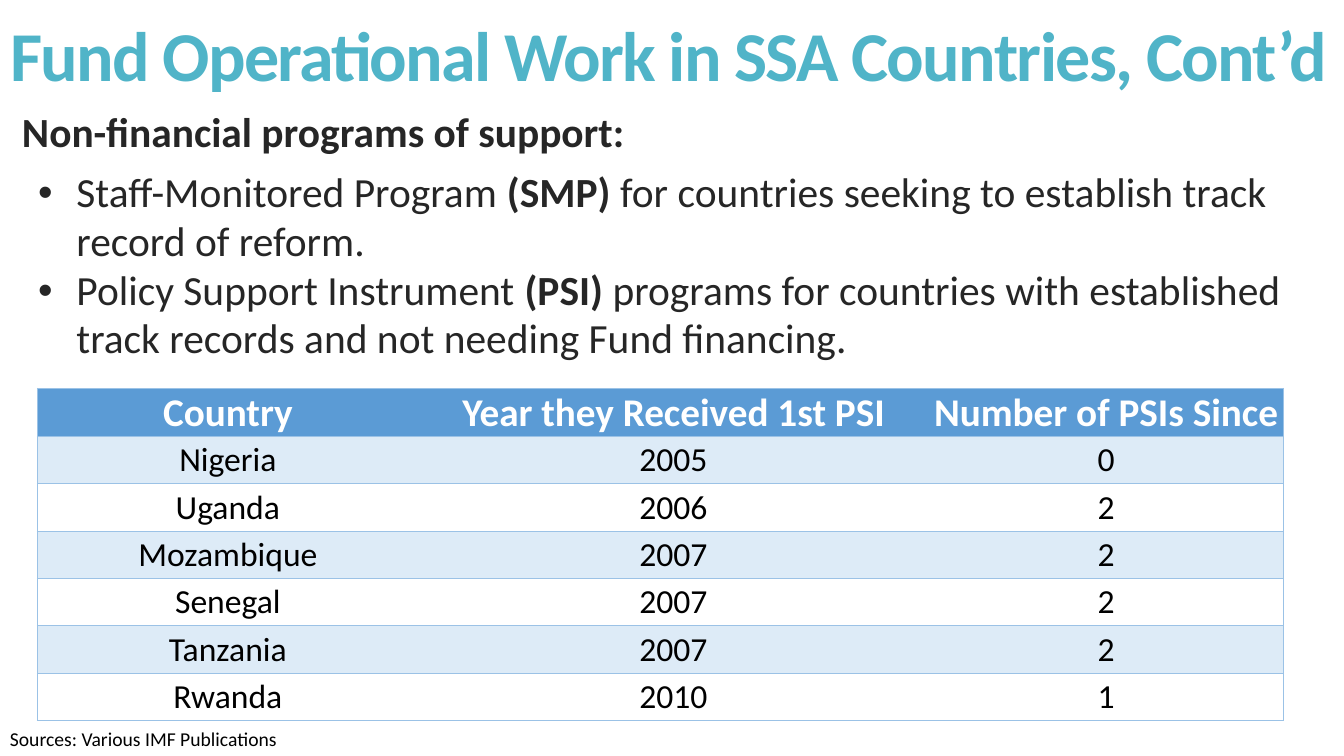
from lxml import etree
from pptx import Presentation
from pptx.dml.color import RGBColor
from pptx.enum.text import MSO_ANCHOR, MSO_AUTO_SIZE, PP_ALIGN
from pptx.oxml.ns import qn
from pptx.util import Inches, Pt

TEAL = RGBColor(0x50, 0xB4, 0xC8)
DARK = RGBColor(0x26, 0x26, 0x26)
BLACK = RGBColor(0, 0, 0)
WHITE = RGBColor(0xFF, 0xFF, 0xFF)
HEADER_BLUE = RGBColor(0x5B, 0x9B, 0xD5)
BAND_BLUE = RGBColor(0xDD, 0xEB, 0xF7)
BORDER_BLUE = RGBColor(0x9B, 0xC2, 0xE6)
LEFT, CENTER = PP_ALIGN.LEFT, PP_ALIGN.CENTER
MIDDLE, TOP = MSO_ANCHOR.MIDDLE, MSO_ANCHOR.TOP
NO_AUTOFIT = MSO_AUTO_SIZE.NONE


def format_run(run, size, color, bold=False):
    run.font.name = "Calibri"
    run.font.size = Pt(size)
    run.font.bold = bold
    run.font.color.rgb = color


def add_border(cell, side, visible):
    line = etree.SubElement(cell._tc.get_or_add_tcPr(), qn(f"a:ln{side}"), w=str(Pt(0.5)))
    if visible:
        fill = etree.SubElement(line, qn("a:solidFill"))
        etree.SubElement(fill, qn("a:srgbClr"), val=str(BORDER_BLUE))
    else:
        etree.SubElement(line, qn("a:noFill"))


presentation = Presentation()
presentation.slide_width = Inches(13.33)
presentation.slide_height = Inches(7.5)
slide = presentation.slides.add_slide(presentation.slide_layouts[5])

title = slide.shapes.title
title.left, title.top = Inches(0), Inches(0)
title.width, title.height = Inches(13.33), Inches(1.19)
title_frame = title.text_frame
title_frame.text = "Fund Operational Work in SSA Countries, Cont’d"
title_frame.auto_size = NO_AUTOFIT
title_frame.vertical_anchor = MIDDLE
title_paragraph = title_frame.paragraphs[0]
title_paragraph.alignment = LEFT
title_paragraph.line_spacing = 0.85
title_run = title_paragraph.runs[0]
format_run(title_run, 50, TEAL, True)
title_run.font._element.set("spc", "-120")

body = slide.shapes.add_textbox(Inches(0), Inches(1.03), Inches(13.33), Inches(2.99))
body_frame = body.text_frame
body_frame.word_wrap = True
body_frame.vertical_anchor = TOP
# (left margin, first-line indent, space after, bullet, runs)
body_paragraphs = [
    (0.12, 0, 8, None, [("Non-financial programs of support:", True)]),
    (0.66, -0.38, 0, "•", [
        ("Staff-Monitored Program ", False),
        ("(SMP)", True),
        (" for countries seeking to establish track record of reform.", False),
    ]),
    (0.66, -0.38, 8, "•", [
        ("Policy Support Instrument ", False),
        ("(PSI)", True),
        (" programs for countries with established track records and not needing Fund financing.", False),
    ]),
]
for index, (margin, indent, space_after, bullet, runs) in enumerate(body_paragraphs):
    paragraph = body_frame.add_paragraph() if index else body_frame.paragraphs[0]
    paragraph.line_spacing = 0.98
    paragraph.space_after = Pt(space_after)
    properties = paragraph._p.get_or_add_pPr()
    properties.set("marL", str(Inches(margin)))
    properties.set("indent", str(Inches(indent)))
    if bullet:
        etree.SubElement(properties, qn("a:buFont"), typeface="Arial")
        etree.SubElement(properties, qn("a:buChar"), char=bullet)
    for text, bold in runs:
        run = paragraph.add_run()
        run.text = text
        format_run(run, 29.6, DARK, bold)

support_rows = [
    ("Country", "Year they Received 1st PSI", "Number of PSIs Since"),
    ("Nigeria", "2005", "0"),
    ("Uganda", "2006", "2"),
    ("Mozambique", "2007", "2"),
    ("Senegal", "2007", "2"),
    ("Tanzania", "2007", "2"),
    ("Rwanda", "2010", "1"),
]
column_widths = [3.78, 5.06, 3.52]
last_column = len(column_widths) - 1
table = slide.shapes.add_table(
    len(support_rows), len(column_widths), Inches(0.37), Inches(3.85), Inches(12.36), Inches(3.31)
).table
for column, width in zip(table.columns, column_widths):
    column.width = Inches(width)
for row_index, values in enumerate(support_rows):
    is_header = row_index == 0
    table.rows[row_index].height = Inches(0.4 if is_header else 0.47)
    for column_index, value in enumerate(values):
        cell = table.cell(row_index, column_index)
        cell.text_frame.text = value
        cell.vertical_anchor = MIDDLE
        cell.margin_left = cell.margin_right = cell.margin_top = Inches(0.01)
        cell.margin_bottom = Inches(0)
        add_border(cell, "L", column_index == 0)
        add_border(cell, "R", column_index == last_column)
        add_border(cell, "T", True)
        add_border(cell, "B", True)
        if is_header or row_index % 2:
            cell.fill.solid()
            cell.fill.fore_color.rgb = HEADER_BLUE if is_header else BAND_BLUE
        else:
            cell.fill.background()
        paragraph = cell.text_frame.paragraphs[0]
        paragraph.alignment = CENTER
        format_run(paragraph.runs[0], 28 if is_header else 24, WHITE if is_header else BLACK, is_header)

sources = slide.shapes.add_textbox(Inches(0), Inches(7.16), Inches(4.07), Inches(0.34))
sources.text_frame.word_wrap = True
sources.text_frame.text = "Sources: Various IMF Publications"
format_run(sources.text_frame.paragraphs[0].runs[0], 14, BLACK)

presentation.save("out.pptx")
